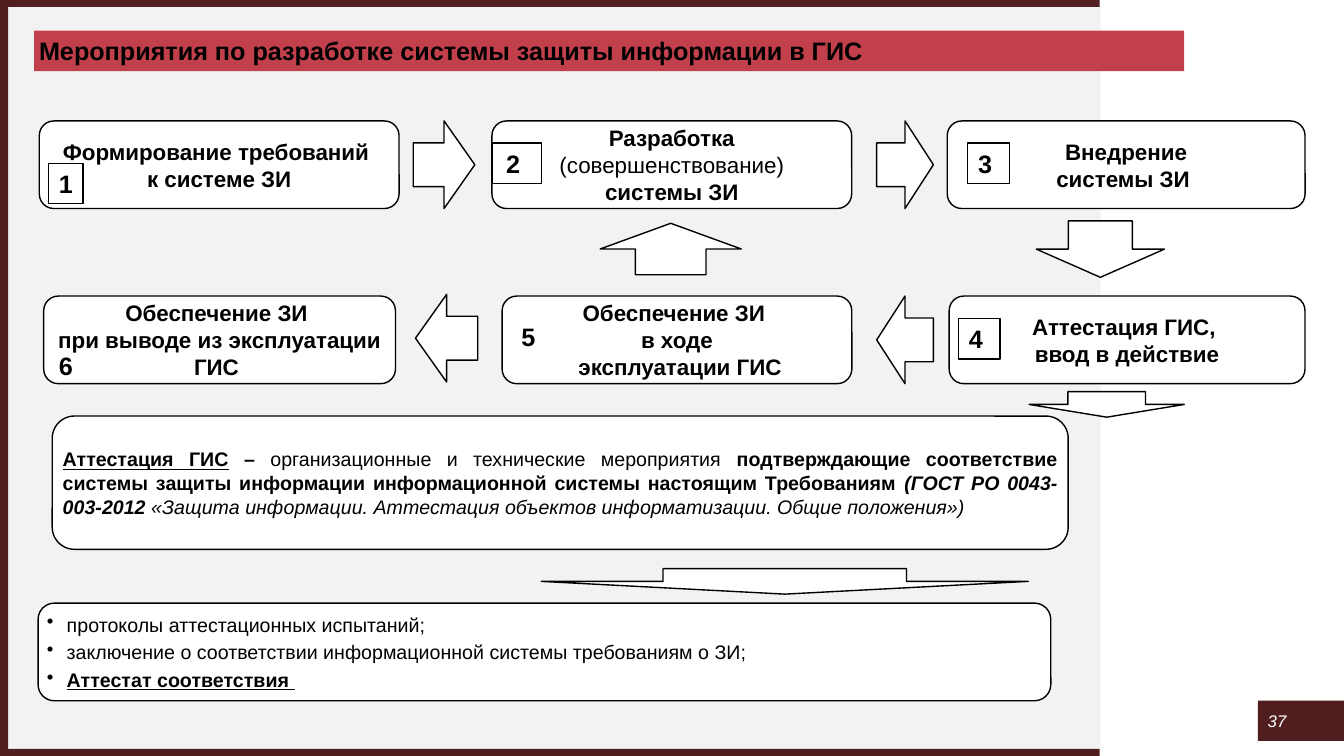
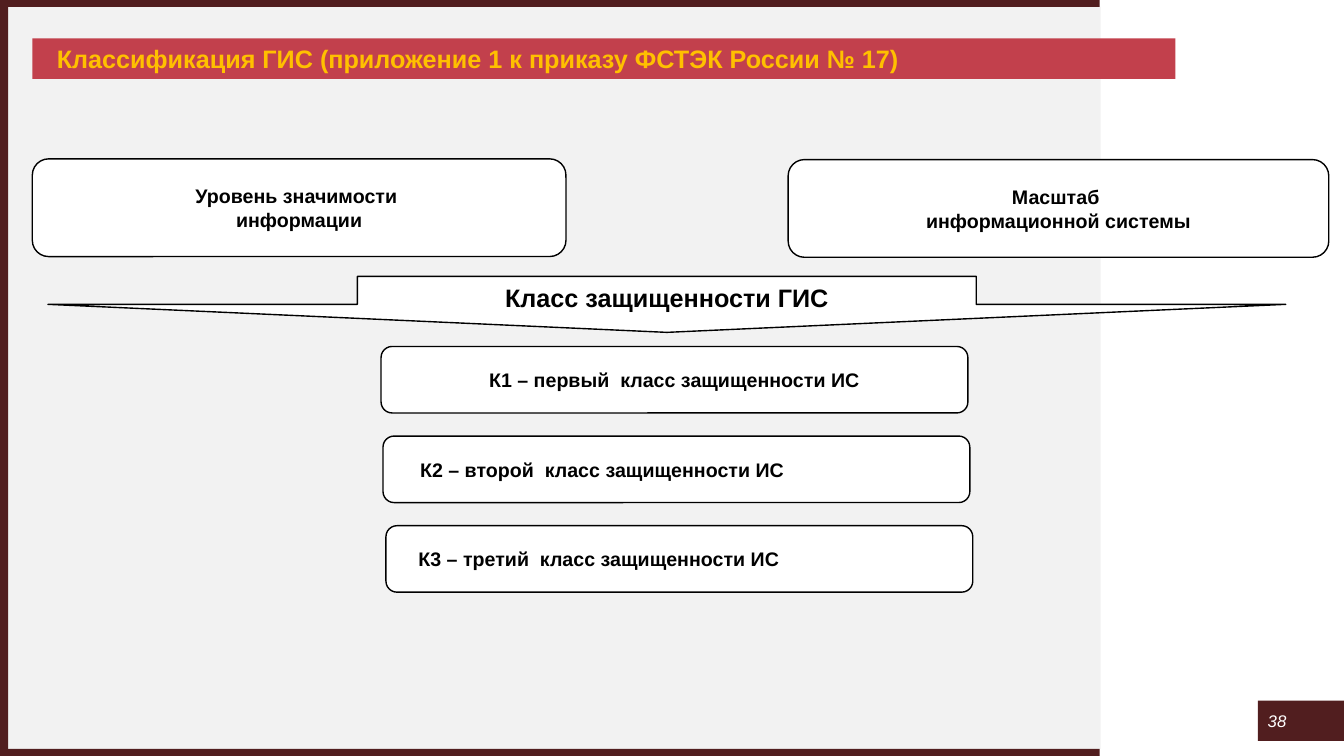
from lxml import etree
from pptx import Presentation
from pptx.dml.color import RGBColor
from pptx.enum.shapes import MSO_SHAPE
from pptx.enum.text import MSO_ANCHOR, MSO_AUTO_SIZE, PP_ALIGN
from pptx.oxml.ns import qn
from pptx.util import Pt

COLORS = {
    "panel": "F2F2F2",
    "frame": "511E1F",
    "title": "C2404C",
    "gold": "FFC000",
    "white": "FFFFFF",
    "black": "000000",
}
FONT = "Arial"
BOLD = {"bold": True}
PLAIN = {}
WIDTH, HEIGHT = 960, 540


def color(name):
    return RGBColor.from_string(COLORS[name])


def set_format(target, values):
    for name, value in values.items():
        setattr(target, name, value)


class Deck:
    """Holds the shared style and the page being drawn."""

    def __init__(self):
        self.deck = Presentation()
        self.deck.slide_width, self.deck.slide_height = Pt(WIDTH), Pt(HEIGHT)
        self.layout = self.deck.slide_layouts[5]
        self.page = None

    def new_page(self, title, number, place, ink="black", indent=0):
        """Start a page with its title band and number."""
        first = self.page is None
        self.page = self.deck.slides.add_slide(self.layout)
        if first:
            self.draw_frame()
        box = self.page.shapes.title
        self.place(box, place)
        self.paint(box, "title", None)
        self.add_text(box, [title], size=18, ink=ink, align=PP_ALIGN.LEFT,
                      margins=(3.6 + indent, 3.6))
        number_box = self.page.shapes.add_textbox(Pt(901.4), Pt(504), Pt(21.6), Pt(21.6))
        self.add_text(number_box, [[(str(number), {"italic": True})]], size=12,
                      ink="white", margins=(0, 0))

    def draw_frame(self):
        """Draw the panel and frame, and hand them to the layout all pages share."""
        bands = [
            ("panel", (5.8, 5, 780.5, 530)),
            ("frame", (898.4, 500.5, 61.6, 28.8)),
            ("frame", (0, 535, 785.5, 5)),
            ("frame", (0, 0, 785.5, 5)),
            ("frame", (0, 0, 5.8, HEIGHT)),
        ]
        for fill, place in bands:
            band = self.shape(MSO_SHAPE.RECTANGLE, place, fill, None)
            self.layout.shapes._spTree.append(band._element)

    def place(self, box, place):
        names = ("left", "top", "width", "height")
        set_format(box, {name: Pt(value) for name, value in zip(names, place)})

    def paint(self, box, fill, line):
        box.fill.solid()
        box.fill.fore_color.rgb = color(fill)
        if line:
            box.line.color.rgb = color(line)
            box.line.width = Pt(1)
        else:
            box.line.fill.background()

    def shape(self, kind, place, fill="white", line="black"):
        box = self.page.shapes.add_shape(kind, *map(Pt, place))
        box.shadow.inherit = False
        self.paint(box, fill, line)
        return box

    def add_text(self, box, lines, size=14, ink="black", align=PP_ALIGN.CENTER,
                 margins=(2.9, 2.9), anchor=MSO_ANCHOR.MIDDLE, wrap=True,
                 indent=0, bullet=None, after=0):
        """Fill a box; a line is bold text or a list of (text, format) spans."""
        frame = box.text_frame
        side, edge = margins
        set_format(frame, {
            "auto_size": MSO_AUTO_SIZE.NONE, "word_wrap": wrap,
            "vertical_anchor": anchor,
            "margin_left": Pt(side), "margin_right": Pt(side),
            "margin_top": Pt(edge), "margin_bottom": Pt(edge),
        })
        for index, line in enumerate(lines):
            para = frame.add_paragraph() if index else frame.paragraphs[0]
            set_format(para, {"alignment": align, "space_after": Pt(after)})
            properties = para._p.get_or_add_pPr()
            if indent:
                properties.set("marL", str(Pt(indent)))
            if bullet:
                properties.set("indent", str(-Pt(indent)))
                etree.SubElement(properties, qn("a:buChar")).set("char", bullet)
            for text, look in [(line, BOLD)] if isinstance(line, str) else line:
                span = para.add_run()
                span.text = text
                base = {"name": FONT, "size": Pt(size), "bold": False}
                set_format(span.font, {**base, **look})
                span.font.color.rgb = color(ink)

    def card(self, place, lines, **style):
        self.add_text(self.shape(MSO_SHAPE.ROUNDED_RECTANGLE, place), lines, **style)

    def step(self, number, place, lines, tag_place, framed=True):
        """A stage of the process with its number tag."""
        self.card(place, lines, size=16)
        if framed:
            tag = self.shape(MSO_SHAPE.RECTANGLE, tag_place)
        else:
            tag = self.page.shapes.add_textbox(*map(Pt, tag_place))
        self.add_text(tag, [number], size=18, margins=(7.2, 3.6),
                      anchor=MSO_ANCHOR.TOP, wrap=False)

    def arrow(self, kind, place, lines=()):
        box = self.shape(kind, place)
        if lines:
            self.add_text(box, lines, size=18, margins=(7.2, 3.6))


def draw_process(show):
    show.new_page("Мероприятия по разработке системы защиты информации в ГИС",
                  37, (24.3, 21.8, 821.5, 29))
    upper, lower, height, tag = 86.4, 211.5, 62.6, 29

    # Arrows between the stages
    for kind, place in [
        (MSO_SHAPE.RIGHT_ARROW, (295.2, upper, 44, height)),
        (MSO_SHAPE.RIGHT_ARROW, (626.2, upper, 40.5, height)),
        (MSO_SHAPE.DOWN_ARROW, (740.2, 157.8, 91.6, 40.3)),
        (MSO_SHAPE.LEFT_ARROW, (626.2, lower, 40.5, height)),
        (MSO_SHAPE.LEFT_ARROW, (296.8, 210.3, 44.5, height)),
        (MSO_SHAPE.UP_ARROW, (428.7, 159.5, 100.8, 36.7)),
        (MSO_SHAPE.DOWN_ARROW, (735.1, 279.8, 110.9, 18.2)),
        (MSO_SHAPE.DOWN_ARROW, (386.7, 406.2, 347.8, 18.2)),
    ]:
        show.arrow(kind, place)

    # Numbered stages
    show.step("1", (28.1, upper, 257, height),
              ["Формирование требований ", "к системе ЗИ"],
              (34.6, 116.6, 24.8, tag))
    show.step("2 ", (351.4, upper, 257, height),
              ["Разработка", [("(совершенствование)", PLAIN)], "системы ЗИ"],
              (351.4, 102.2, 35.3, tag))
    show.step("3 ", (676.6, upper, 255.6, height),
              ["Внедрение", "системы ЗИ "], (691.2, 102.2, 29.8, tag))
    show.step("4 ", (678, lower, 254.2, height),
              ["Аттестация ГИС, ", "ввод в действие"],
              (684.6, 227.4, 29.8, tag))
    show.step("5 ", (358.7, lower, 249.8, height),
              ["Обеспечение ЗИ ", "в ходе", " эксплуатации ГИС"],
              (365, 226, 29.8, tag), framed=False)
    show.step("6 ", (31.2, lower, 251.3, height),
              ["Обеспечение ЗИ ", "при выводе из эксплуатации ГИС "],
              (34.6, 246.4, 29.8, tag), framed=False)

    # Definition and results
    show.card((37.3, 297.2, 725.7, 95.2), [[
        ("Аттестация ГИС", {"bold": True, "underline": True}),
        (" – ", BOLD),
        ("организационные и технические мероприятия ", PLAIN),
        ("подтверждающие соответствие системы защиты информации "
         "информационной системы настоящим Требованиям ", BOLD),
        ("(ГОСТ РО 0043-003-2012", {"bold": True, "italic": True}),
        (" «Защита информации. Аттестация объектов информатизации. "
         "Общие положения»)", {"italic": True}),
    ]], align=PP_ALIGN.JUSTIFY)
    show.card((27.2, 430.8, 723.4, 69.8), [
        [("протоколы аттестационных испытаний;", PLAIN)],
        [("заключение о соответствии информационной системы "
          "требованиям о ЗИ;", PLAIN)],
        [("Аттестат соответствия ", {"bold": True, "underline": True})],
    ], align=PP_ALIGN.JUSTIFY, indent=14.2, bullet="•", after=3)


def draw_classes(show):
    show.new_page("Классификация ГИС (приложение 1 к приказу ФСТЭК России № 17)",
                  38, (23.1, 27.4, 816.5, 29), ink="gold", indent=13.9)

    # Criteria and the class they give
    show.card((23.1, 113.5, 381.2, 69.8), ["Уровень значимости ", "информации"])
    show.card((563, 114, 386.2, 69.8), ["Масштаб ", "информационной системы"])
    show.arrow(MSO_SHAPE.DOWN_ARROW, (34.2, 197.4, 884.2, 40),
               ["Класс защищенности ГИС"])

    # Protection classes
    classes = [
        ("К1 – первый  класс защищенности ИС", 272.2, PP_ALIGN.CENTER, 0),
        ("К2 – второй  класс защищенности ИС", 273.6, PP_ALIGN.LEFT, 21.3),
        ("К3 – третий  класс защищенности ИС", 275.7, PP_ALIGN.LEFT, 18),
    ]
    for index, (text, left, align, indent) in enumerate(classes):
        show.card((left, 247.5 + 64 * index, 419.2, 47.5), [text],
                  align=align, indent=indent)


def main():
    show = Deck()
    draw_process(show)
    draw_classes(show)
    show.deck.save("out.pptx")


if __name__ == "__main__":
    main()
